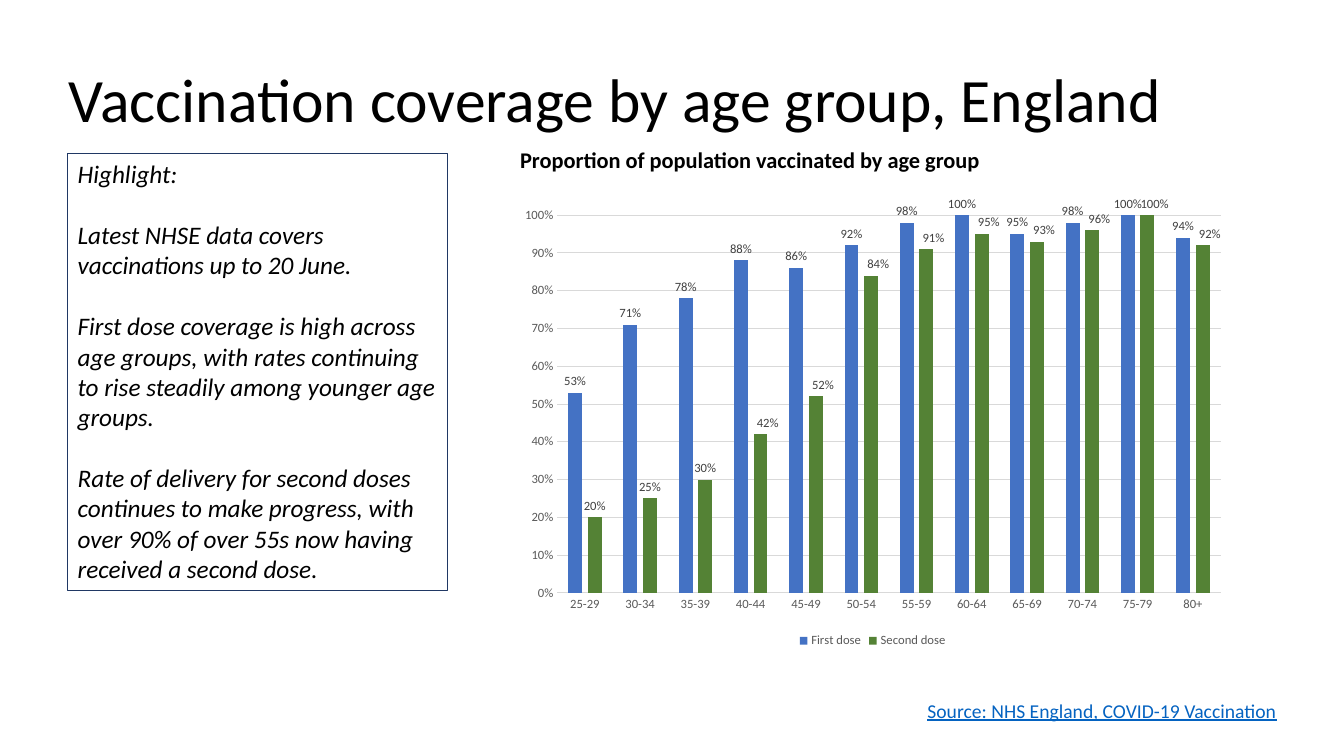
from copy import deepcopy
from dataclasses import dataclass, field

from lxml.etree import SubElement
from pptx import Presentation
from pptx.chart.data import CategoryChartData
from pptx.dml.color import RGBColor
from pptx.enum.chart import XL_CHART_TYPE as ChartType
from pptx.enum.chart import XL_LABEL_POSITION as LabelPosition
from pptx.enum.chart import XL_LEGEND_POSITION as LegendPosition
from pptx.enum.chart import XL_TICK_MARK as TickMark
from pptx.enum.text import MSO_ANCHOR as Anchor
from pptx.enum.text import MSO_AUTO_SIZE as AutoSize
from pptx.enum.text import PP_ALIGN as Align
from pptx.oxml import parse_xml
from pptx.oxml.ns import nsdecls, qn
from pptx.util import Inches, Pt

FONT = "Calibri"
COLORS = {
    "text": "000000", "border": "203864", "link": "0563C1", "axis": "595959",
    "label": "404040", "grid": "D9D9D9", "first": "4472C4", "second": "548235",
}
HIGHLIGHTS = [
    "Highlight:",
    "Latest NHSE data covers vaccinations up to 20 June.",
    "First dose coverage is high across age groups, with rates continuing "
    "to rise steadily among younger age groups.",
    "Rate of delivery for second doses continues to make progress, with "
    "over 90% of over 55s now having received a second dose.",
]
AGE_GROUPS = [f"{age}-{age + 4}" for age in range(25, 80, 5)] + ["80+"]


@dataclass
class Dose:
    name: str
    color: str
    percents: list[int]
    shifted_labels: range


@dataclass
class Caption:
    text: str
    place: tuple[float, float, float, float]
    style: dict = field(default_factory=dict)


DOSES = [
    Dose("First dose", "first",
         [53, 71, 78, 88, 86, 92, 98, 100, 95, 98, 100, 94], range(0)),
    Dose("Second dose", "second",
         [20, 25, 30, 42, 52, 84, 91, 95, 93, 96, 100, 92], range(3, 12)),
]
CAPTIONS = [
    Caption("Source: NHS England, COVID-19 Vaccination", (9.1, 6.88, 3.73, 0.34),
            {"size": 14, "color": "link", "underline": True}),
    Caption("Proportion of population vaccinated by age group",
            (5.06, 1.4, 4.83, 0.67), {"size": 16, "bold": True}),
]


def rgb(name: str) -> RGBColor:
    return RGBColor.from_string(COLORS[name])


def set_font(font, size: float, color: str = "text", **flags: bool) -> None:
    font.name, font.size = FONT, Pt(size)
    font.color.rgb = rgb(color)
    for flag, value in flags.items():
        setattr(font, flag, value)


def write(para, text: str, *, space_before: float = 0,
          line_spacing: float = 1.0, **style) -> None:
    para.alignment = Align.LEFT
    para.space_before = Pt(space_before)
    para.line_spacing = line_spacing
    span = para.add_run()
    span.text = text
    set_font(span.font, **style)


def move(shape, left: float, top: float, width: float, height: float) -> None:
    shape.left, shape.top = Inches(left), Inches(top)
    shape.width, shape.height = Inches(width), Inches(height)


def remove_bullet(para) -> None:
    properties = para._p.get_or_add_pPr()
    properties.set("marL", "0")
    properties.set("indent", "0")
    SubElement(properties, qn("a:buNone"))


def add_title(slide) -> None:
    title = slide.shapes.title
    move(title, 0.58, 0.29, 11.5, 1.45)
    title.text_frame.vertical_anchor = Anchor.MIDDLE
    write(title.text_frame.paragraphs[0],
          "Vaccination coverage by age group, England", size=44, line_spacing=0.9)


def add_highlights(slide) -> None:
    box = slide.placeholders[1]
    move(box, 0.67, 1.52, 3.77, 4.34)
    box.line.color.rgb = rgb("border")
    box.line.width = Pt(0.75)
    frame = box.text_frame
    frame.auto_size = AutoSize.NONE
    for index, text in enumerate(HIGHLIGHTS):
        para = frame.add_paragraph() if index else frame.paragraphs[0]
        remove_bullet(para)
        write(para, text, size=18, italic=True, space_before=22 if index else 0)


def add_caption(slide, caption: Caption) -> None:
    box = slide.shapes.add_textbox(*map(Inches, caption.place))
    box.text_frame.word_wrap = False
    write(box.text_frame.paragraphs[0], caption.text, **caption.style)


def manual_layout(*settings: tuple[str, str | float]):
    """Build a chart layout element from tag and value pairs."""
    inner = "".join(f'<c:{tag} val="{value}"/>' for tag, value in settings)
    return parse_xml(f'<c:layout {nsdecls("c")}><c:manualLayout>{inner}'
                     "</c:manualLayout></c:layout>")


def shift_labels(labels, points: range) -> None:
    """Nudge the labels of some points right, keeping the series format."""
    group = labels._element
    shared = list(group)
    for position, point in enumerate(points):
        label = parse_xml(f'<c:dLbl {nsdecls("c")}><c:idx val="{point}"/></c:dLbl>')
        label.append(manual_layout(("x", 0.01), ("y", 0)))
        label.extend(deepcopy(shared))
        for extra in label.findall(qn("c:showLeaderLines")):
            label.remove(extra)
        group.insert(position, label)


def format_series(series, dose: Dose) -> None:
    series.format.fill.solid()
    series.format.fill.fore_color.rgb = rgb(dose.color)
    series.invert_if_negative = False
    labels = series.data_labels
    labels.show_value = True
    labels.number_format, labels.number_format_is_linked = "0%", False
    labels.position = LabelPosition.OUTSIDE_END
    set_font(labels.font, 9, "label")
    shift_labels(labels, dose.shifted_labels)


def format_axes(chart) -> None:
    for axis in (chart.category_axis, chart.value_axis):
        axis.major_tick_mark = axis.minor_tick_mark = TickMark.NONE
        set_font(axis.tick_labels.font, 9, "axis")
    values = chart.value_axis
    values.minimum_scale, values.maximum_scale, values.major_unit = 0, 1, 0.1
    values.tick_labels.number_format = "0%"
    values.tick_labels.number_format_is_linked = False
    values.format.line.fill.background()
    for line in (chart.category_axis.format.line, values.major_gridlines.format.line):
        line.color.rgb = rgb("grid")
        line.width = Pt(0.75)


def add_coverage_chart(slide) -> None:
    data = CategoryChartData(number_format="0%")
    data.categories = AGE_GROUPS
    for dose in DOSES:
        data.add_series(dose.name, [percent / 100 for percent in dose.percents])
    place = map(Inches, (5.06, 1.95, 7.19, 4.52))
    chart = slide.shapes.add_chart(ChartType.COLUMN_CLUSTERED, *place, data).chart
    set_font(chart.font, 10)
    chart.has_title = False
    chart.has_legend = True
    chart.legend.position = LegendPosition.BOTTOM
    chart.legend.include_in_layout = False
    set_font(chart.legend.font, 9, "axis")
    plot = chart.plots[0]
    plot.gap_width, plot.overlap, plot.vary_by_categories = 156, -40, False
    for series, dose in zip(plot.series, DOSES):
        format_series(series, dose)
    format_axes(chart)
    area = chart._chartSpace.chart.plotArea
    for layout in area.findall(qn("c:layout")):
        area.remove(layout)
    area.insert(0, manual_layout(
        ("layoutTarget", "inner"), ("xMode", "edge"), ("yMode", "edge"),
        ("x", 0.065), ("y", 0.04), ("w", 0.915), ("h", 0.83)))


def main() -> None:
    deck = Presentation()
    deck.slide_width, deck.slide_height = Inches(13.33), Inches(7.5)
    slide = deck.slides.add_slide(deck.slide_layouts[1])
    add_title(slide)
    add_highlights(slide)
    for caption in CAPTIONS:
        add_caption(slide, caption)
    add_coverage_chart(slide)
    deck.save("out.pptx")


if __name__ == "__main__":
    main()
